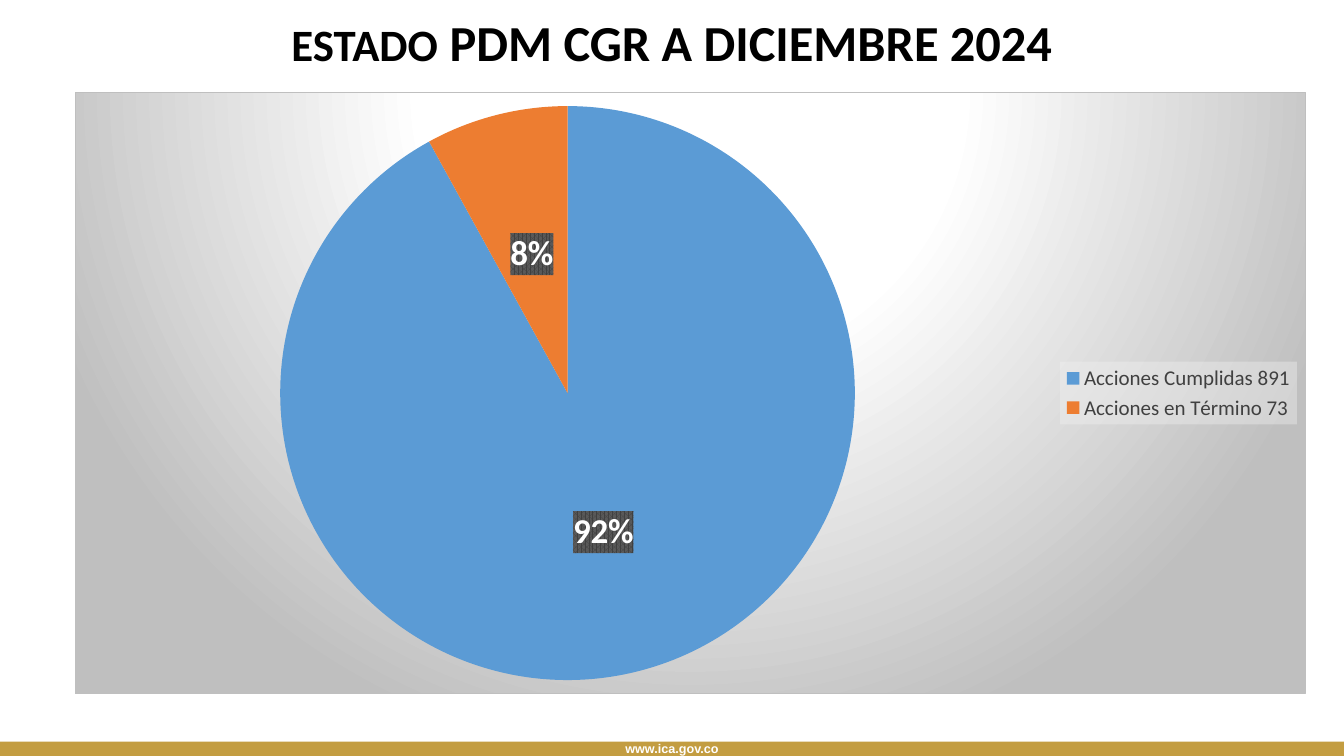
from dataclasses import dataclass

from lxml import etree
from pptx import Presentation
from pptx.chart.data import CategoryChartData
from pptx.dml.color import RGBColor
from pptx.enum.chart import XL_CHART_TYPE, XL_LABEL_POSITION, XL_LEGEND_POSITION
from pptx.enum.shapes import MSO_SHAPE
from pptx.enum.text import MSO_ANCHOR, MSO_AUTO_SIZE, PP_ALIGN
from pptx.oxml import parse_xml
from pptx.util import Inches, Pt

PIE = XL_CHART_TYPE.PIE
LABEL_CENTER = XL_LABEL_POSITION.CENTER
LEGEND_RIGHT = XL_LEGEND_POSITION.RIGHT
RECTANGLE = MSO_SHAPE.RECTANGLE
TOP, MIDDLE = MSO_ANCHOR.TOP, MSO_ANCHOR.MIDDLE
NO_AUTOFIT = MSO_AUTO_SIZE.NONE
CENTER = PP_ALIGN.CENTER

WIDTH, HEIGHT = Inches(13.33), Inches(7.5)
DRAWING = "http://schemas.openxmlformats.org/drawingml/2006/main"
CHART = "http://schemas.openxmlformats.org/drawingml/2006/chart"

BACKDROP = (
    '<a:gradFill rotWithShape="1"><a:gsLst>'
    '<a:gs pos="0"><a:srgbClr val="FFFFFF"/></a:gs>'
    '<a:gs pos="39000"><a:srgbClr val="FFFFFF"/></a:gs>'
    '<a:gs pos="100000"><a:srgbClr val="BFBFBF"/></a:gs></a:gsLst>'
    '<a:path path="circle"><a:fillToRect l="50000" t="-80000" r="50000" b="180000"/></a:path>'
    '</a:gradFill><a:ln w="9525"><a:solidFill><a:srgbClr val="BFBFBF"/></a:solidFill></a:ln>'
)
LABEL_FILL = (
    '<a:pattFill prst="pct75"><a:fgClr><a:srgbClr val="404040"/></a:fgClr>'
    '<a:bgClr><a:srgbClr val="595959"/></a:bgClr></a:pattFill><a:ln><a:noFill/></a:ln>'
)
LEGEND_FILL = (
    '<a:solidFill><a:srgbClr val="F2F2F2"><a:alpha val="39000"/></a:srgbClr></a:solidFill>'
    '<a:ln><a:noFill/></a:ln>'
)


@dataclass(frozen=True)
class Area:
    left: float
    top: float
    width: float
    height: float

    def box(self) -> tuple[int, int, int, int]:
        return (round(self.left * WIDTH), round(self.top * HEIGHT),
                round(self.width * WIDTH), round(self.height * HEIGHT))


@dataclass(frozen=True)
class Status:
    name: str
    percent: int
    color: str


TITLE_AREA = Area(0.0885, 0.0173, 0.823, 0.104)
CHART_AREA = Area(0.0555, 0.1213, 0.916, 0.7973)
FOOTER_AREA = Area(0, 0.981, 1, 0.019)
STATUSES = [
    Status("Acciones Cumplidas 891", 92, "5B9BD5"),
    Status("Acciones en Término 73", 8, "ED7D31"),
]


def rgb(value: str) -> RGBColor:
    return RGBColor.from_string(value)


def style_font(font, size: float, color: str, bold: bool = False, face: str = "Calibri") -> None:
    font.name, font.size, font.bold = face, Pt(size), bold
    font.color.rgb = rgb(color)


def write(paragraph, text: str, **style) -> None:
    paragraph.alignment = CENTER
    run = paragraph.add_run()
    run.text = text
    style_font(run.font, **style)


def paint_after(element: etree.ElementBase, tag: str, paint: str) -> None:
    anchor = element.find(f"{{{CHART}}}{tag}")
    anchor.addnext(parse_xml(f'<c:spPr xmlns:c="{CHART}" xmlns:a="{DRAWING}">{paint}</c:spPr>'))


def add_footer(slide) -> None:
    footer = slide.shapes.add_shape(RECTANGLE, *FOOTER_AREA.box())
    footer.shadow.inherit = False
    footer.fill.solid()
    footer.fill.fore_color.rgb = rgb("C39D41")
    footer.line.fill.background()
    frame = footer.text_frame
    frame.margin_top = frame.margin_bottom = 0
    frame.vertical_anchor = MIDDLE
    write(frame.paragraphs[0], "www.ica.gov.co", size=9, color="FFFFFF", bold=True, face="Arial")


def add_heading(slide) -> None:
    heading = slide.shapes.title
    heading.left, heading.top, heading.width, heading.height = TITLE_AREA.box()
    frame = heading.text_frame
    frame.auto_size = NO_AUTOFIT
    frame.vertical_anchor = TOP
    paragraph = frame.paragraphs[0]
    paragraph.line_spacing = 0.9
    write(paragraph, "ESTADO", size=32, color="000000", bold=True)
    write(paragraph, " PDM CGR A DICIEMBRE 2024", size=36, color="000000", bold=True)


def add_status_pie(slide) -> None:
    figures = CategoryChartData(number_format="0")
    figures.categories = [status.name for status in STATUSES]
    figures.add_series("Series 1", [status.percent for status in STATUSES])
    pie = slide.shapes.add_chart(PIE, *CHART_AREA.box(), figures).chart
    pie.has_title = False
    style_font(pie.font, 10, "000000")
    paint_after(pie.element, "chart", BACKDROP)

    pie.has_legend = True
    pie.legend.position = LEGEND_RIGHT
    pie.legend.include_in_layout = False
    style_font(pie.legend.font, 15, "404040")
    paint_after(pie.legend.font and pie.element.find(f".//{{{CHART}}}legend"), "overlay", LEGEND_FILL)

    plot = pie.plots[0]
    plot.vary_by_categories = True
    for index, status in enumerate(STATUSES):
        fill = plot.series[0].points[index].format.fill
        fill.solid()
        fill.fore_color.rgb = rgb(status.color)

    labels = plot.series[0].data_labels
    labels.show_percentage = True
    labels.show_value = False
    labels.number_format = "0%"
    labels.number_format_is_linked = False
    labels.position = LABEL_CENTER
    style_font(labels.font, 25, "FFFFFF", bold=True)
    paint_after(pie.element.find(f".//{{{CHART}}}ser/{{{CHART}}}dLbls"), "numFmt", LABEL_FILL)


def main() -> None:
    deck = Presentation()
    deck.slide_width, deck.slide_height = WIDTH, HEIGHT
    slide = deck.slides.add_slide(deck.slide_layouts[5])
    add_footer(slide)
    add_heading(slide)
    add_status_pie(slide)
    deck.save("out.pptx")


if __name__ == "__main__":
    main()
